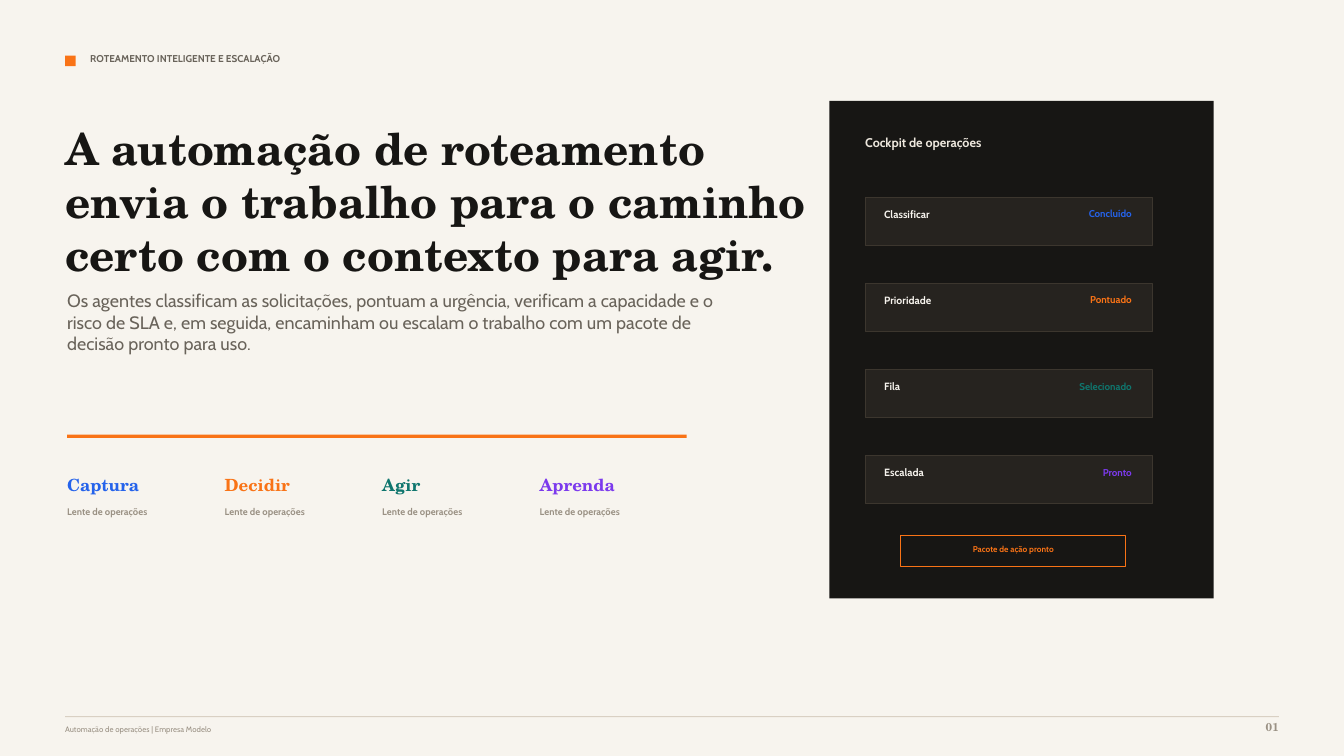
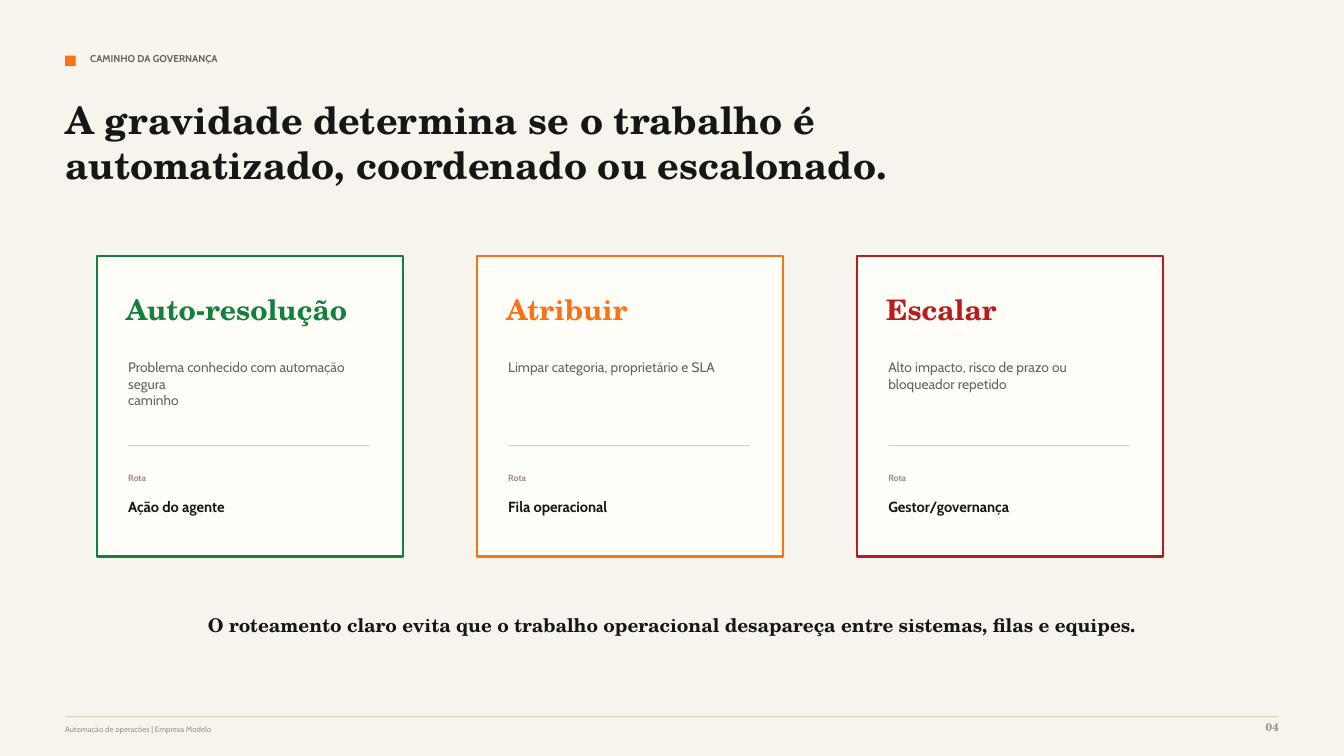
"""Build two slides on routing automation and its governance path."""
from pptx import Presentation
from pptx.dml.color import RGBColor
from pptx.enum.shapes import MSO_SHAPE
from pptx.enum.text import MSO_ANCHOR, MSO_AUTO_SIZE, PP_ALIGN
from pptx.util import Emu, Pt

RECT = MSO_SHAPE.RECTANGLE
TOP = MSO_ANCHOR.TOP
NO_FIT = MSO_AUTO_SIZE.NONE
LEFT, CENTER, RIGHT = PP_ALIGN.LEFT, PP_ALIGN.CENTER, PP_ALIGN.RIGHT

PAPER = RGBColor(0xF7, 0xF4, 0xEE)
CARD = RGBColor(0xFF, 0xFD, 0xF8)
INK = RGBColor(0x17, 0x16, 0x14)
ROW = RGBColor(0x26, 0x23, 0x1F)
ROW_EDGE = RGBColor(0x3C, 0x36, 0x2E)
SAND = RGBColor(0xED, 0xE7, 0xDD)
RULE = RGBColor(0xD9, 0xD0, 0xC3)
GRAY = RGBColor(0x69, 0x63, 0x5A)
MUTED = RGBColor(0x9A, 0x91, 0x84)
ORANGE = RGBColor(0xF9, 0x73, 0x16)
BLUE = RGBColor(0x25, 0x63, 0xEB)
TEAL = RGBColor(0x0F, 0x76, 0x6E)
VIOLET = RGBColor(0x7C, 0x3A, 0xED)
GREEN = RGBColor(0x15, 0x80, 0x3D)
RED = RGBColor(0xB9, 0x1C, 0x1C)

SANS, SERIF = "Cabin", "TeX Gyre Schola"
PX = 9525
WIDTH, HEIGHT = 1280, 720
MARGIN = 62
TITLE_SLIDE, TITLE_ONLY = 0, 5

FOOTER = "Automação de operações | Empresa Modelo"

COVER = {
    "kicker": "ROTEAMENTO INTELIGENTE E ESCALAÇÃO",
    "title": "A automação de roteamento envia o trabalho para o caminho "
             "certo com o contexto para agir.",
    "number": "01",
}
LEAD = ("Os agentes classificam as solicitações, pontuam a urgência, "
        "verificam a capacidade e o risco de SLA e, em seguida, encaminham "
        "ou escalam o trabalho com um pacote de decisão pronto para uso.")
STAGES = [("Captura", BLUE), ("Decidir", ORANGE),
          ("Agir", TEAL), ("Aprenda", VIOLET)]
STAGE_NOTE = "Lente de operações"
PANEL_TITLE = "Cockpit de operações"
CHECKS = [
    ("Classificar", "Concluído", BLUE),
    ("Prioridade", "Pontuado", ORANGE),
    ("Fila", "Selecionado", TEAL),
    ("Escalada", "Pronto", VIOLET),
]
PANEL_ACTION = "Pacote de ação pronto"

GOVERNANCE = {
    "kicker": "CAMINHO DA GOVERNANÇA",
    "title": "A gravidade determina se o trabalho é automatizado, "
             "coordenado ou escalonado.",
    "number": "04",
}
ROUTE_LABEL = "Rota"
ROUTES = [
    ("Auto-resolução", "Problema conhecido com automação segura\ncaminho",
     "Ação do agente", GREEN),
    ("Atribuir", "Limpar categoria, proprietário e SLA",
     "Fila operacional", ORANGE),
    ("Escalar", "Alto impacto, risco de prazo ou\nbloqueador repetido",
     "Gestor/governança", RED),
]
CLOSING = ("O roteamento claro evita que o trabalho operacional desapareça "
           "entre sistemas, filas e equipes.")


def emu(box):
    return [Emu(v * PX) for v in box]


def add_rect(slide, box, fill=None, line=None, weight=0.75):
    sp = slide.shapes.add_shape(RECT, *emu(box))
    sp.shadow.inherit = False
    if fill is None:
        sp.fill.background()
    else:
        sp.fill.solid()
        sp.fill.fore_color.rgb = fill
    if line is None:
        sp.line.fill.background()
    else:
        sp.line.color.rgb = line
        sp.line.width = Pt(weight)


def write(sp, text, size, color, font=SANS, bold=True, align=LEFT):
    tf = sp.text_frame
    tf.text = text
    tf.word_wrap = True
    tf.auto_size = NO_FIT
    tf.vertical_anchor = TOP
    tf.margin_left = tf.margin_top = tf.margin_right = tf.margin_bottom = 0
    for p in tf.paragraphs:
        p.alignment = align
        p.space_before = Pt(0)
        for r in p.runs:
            r.font.name = font
            r.font.size = Pt(size)
            r.font.bold = bold
            r.font.color.rgb = color


def add_text(slide, box, *args, **style):
    write(slide.shapes.add_textbox(*emu(box)), *args, **style)


def fill_placeholder(sp, box, *args, **style):
    sp.left, sp.top, sp.width, sp.height = emu(box)
    write(sp, *args, **style)


def add_page(prs, layout, content, title_box, title_size):
    slide = prs.slides.add_slide(prs.slide_layouts[layout])
    fill_placeholder(slide.shapes.title, title_box, content["title"],
                     title_size, INK, font=SERIF)
    add_rect(slide, (MARGIN, 53, 10, 10), ORANGE)
    add_text(slide, (86, 50, 620, 18), content["kicker"], 7.1, GRAY)
    add_rect(slide, (MARGIN, 682, WIDTH - 2 * MARGIN, 1), RULE)
    add_text(slide, (MARGIN, 690, 760, 14), FOOTER, 5.6, MUTED, bold=False)
    add_text(slide, (WIDTH - MARGIN - 48, 686, 48, 18), content["number"],
             8.2, MUTED, font=SERIF, align=RIGHT)
    return slide


def build_cover(prs):
    slide = add_page(prs, TITLE_SLIDE, COVER, (MARGIN, 116, 740, 126), 31.5)
    fill_placeholder(slide.placeholders[1], (64, 276, 620, 88), LEAD, 12.8,
                     GRAY, bold=False)
    add_rect(slide, (64, 414, 590, 3), ORANGE)
    for i, (stage, color) in enumerate(STAGES):
        x = 64 + i * 150
        add_text(slide, (x, 452, 120, 20), stage, 12, color, font=SERIF)
        add_text(slide, (x, 482, 120, 16), STAGE_NOTE, 6.8, MUTED)

    add_rect(slide, (790, 96, 366, 474), INK)
    add_text(slide, (824, 128, 220, 24), PANEL_TITLE, 9, SAND)
    for i, (check, status, color) in enumerate(CHECKS):
        y = 188 + i * 82
        add_rect(slide, (824, y, 274, 46), ROW, ROW_EDGE)
        add_text(slide, (842, y + 10, 130, 16), check, 7.5, PAPER)
        add_text(slide, (982, y + 10, 96, 16), status, 7.1, color,
                 align=RIGHT)
    add_rect(slide, (858, 510, 214, 30), line=ORANGE)
    add_text(slide, (870, 518, 190, 14), PANEL_ACTION, 6, ORANGE,
             align=CENTER)


def build_governance(prs):
    slide = add_page(prs, TITLE_ONLY, GOVERNANCE, (MARGIN, 92, 900, 98), 27)
    for i, (name, case, route, color) in enumerate(ROUTES):
        x = 92 + i * 362
        add_rect(slide, (x, 244, 292, 286), CARD, color, 1.5)
        add_text(slide, (x + 28, 278, 220, 34), name, 20.2, color, font=SERIF)
        add_text(slide, (x + 30, 342, 224, 50), case, 9.8, GRAY, bold=False)
        add_rect(slide, (x + 30, 424, 230, 1), RULE)
        add_text(slide, (x + 30, 450, 160, 14), ROUTE_LABEL, 6.4, MUTED)
        add_text(slide, (x + 30, 474, 220, 22), route, 10.5, INK)
    add_text(slide, (160, 584, 960, 28), CLOSING, 13.5, INK, font=SERIF,
             align=CENTER)


def main():
    prs = Presentation()
    prs.slide_width, prs.slide_height = emu((WIDTH, HEIGHT))
    background = prs.slide_master.background.fill
    background.solid()
    background.fore_color.rgb = PAPER
    build_cover(prs)
    build_governance(prs)
    prs.save("out.pptx")


if __name__ == "__main__":
    main()
